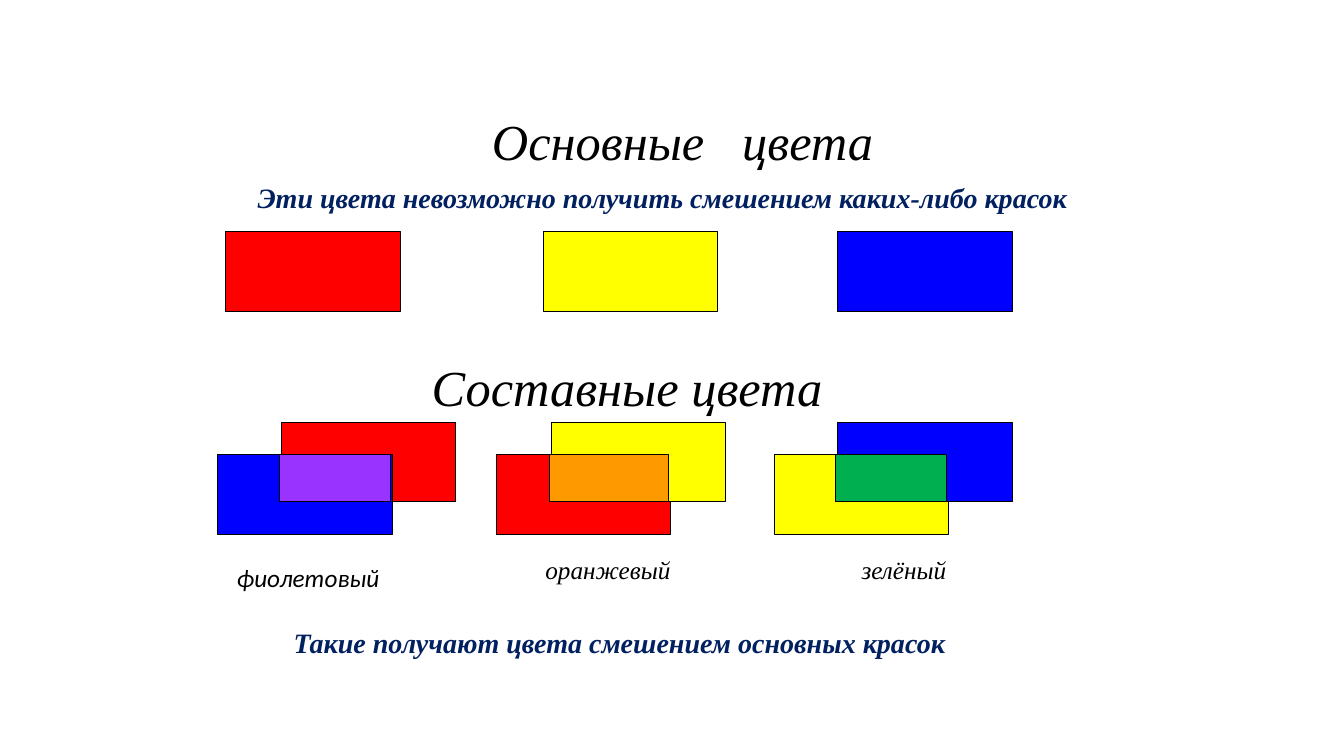
"""Build a slide on primary colours and the secondary colours mixed from them."""
from dataclasses import dataclass

from pptx import Presentation
from pptx.dml.color import RGBColor
from pptx.enum.shapes import MSO_SHAPE as Shape
from pptx.enum.text import MSO_ANCHOR as Anchor, PP_ALIGN as Align
from pptx.slide import Slide
from pptx.util import Emu, Pt

EMU_PER_PX = 9144


@dataclass(frozen=True)
class Theme:
    red: str = "FF0000"
    yellow: str = "FFFF00"
    blue: str = "0000FF"
    violet: str = "9933FF"
    orange: str = "FF9900"
    green: str = "00B050"
    ink: str = "000000"
    navy: str = "002060"
    serif: str = "Times New Roman"
    sans: str = "Calibri"
    title_size: int = 36
    note_size: int = 20
    label_size: int = 18
    outline: float = 0.75


THEME = Theme()
SWATCH_WIDTH, SWATCH_HEIGHT = 173, 79
PRIMARY_TOP, UPPER_TOP, LOWER_TOP = 230, 419, 451
OVERLAP_SHIFT = 2


@dataclass(frozen=True)
class Block:
    left: int
    top: int
    color: str
    width: int = SWATCH_WIDTH
    height: int = SWATCH_HEIGHT


@dataclass(frozen=True)
class Mixture:
    lower_left: int
    lower_color: str
    upper_left: int
    upper_color: str
    blend_color: str
    lower_in_front: bool = False


@dataclass(frozen=True)
class Caption:
    text: str
    left: int
    top: int
    width: int
    height: int
    size: int = THEME.label_size
    color: str = THEME.ink
    font: str = THEME.serif
    bold: bool = False
    wrap: bool = False
    word_gap: int = 0


PRIMARIES = [
    Block(224, PRIMARY_TOP, THEME.red),
    Block(539, PRIMARY_TOP, THEME.yellow),
    Block(831, PRIMARY_TOP, THEME.blue),
]
MIXTURES = [
    Mixture(216, THEME.blue, 279, THEME.red, THEME.violet, lower_in_front=True),
    Mixture(492, THEME.red, 547, THEME.yellow, THEME.orange),
    Mixture(768, THEME.yellow, 831, THEME.blue, THEME.green),
]
CAPTIONS = [
    Caption("Основные цвета", 374, 104, 606, 63, THEME.title_size, word_gap=18),
    Caption("Эти цвета невозможно получить смешением каких-либо красок",
            208, 174, 898, 44, THEME.note_size, THEME.navy, bold=True, wrap=True),
    Caption("Составные цвета", 303, 348, 638, 55, THEME.title_size),
    Caption("фиолетовый", 224, 553, 163, 39, font=THEME.sans),
    Caption("оранжевый", 531, 545, 144, 47),
    Caption("зелёный", 823, 545, 147, 39),
    Caption("Такие получают цвета смешением основных красок",
            201, 616, 827, 43, THEME.note_size, THEME.navy, bold=True, wrap=True),
]


def px(length: int) -> Emu:
    return Emu(length * EMU_PER_PX)


def draw_block(slide: Slide, block: Block) -> None:
    shape = slide.shapes.add_shape(
        Shape.RECTANGLE, px(block.left), px(block.top), px(block.width), px(block.height))
    shape.shadow.inherit = False
    shape.fill.solid()
    shape.fill.fore_color.rgb = RGBColor.from_string(block.color)
    shape.line.color.rgb = RGBColor.from_string(THEME.ink)
    shape.line.width = Pt(THEME.outline)


def draw_mixture(slide: Slide, mixture: Mixture) -> None:
    lower = Block(mixture.lower_left, LOWER_TOP, mixture.lower_color)
    upper = Block(mixture.upper_left, UPPER_TOP, mixture.upper_color)
    blend = Block(
        upper.left - OVERLAP_SHIFT, LOWER_TOP, mixture.blend_color,
        lower.left + lower.width - upper.left, upper.top + upper.height - LOWER_TOP)
    pair = (upper, lower) if mixture.lower_in_front else (lower, upper)
    for block in (*pair, blend):
        draw_block(slide, block)


def draw_caption(slide: Slide, caption: Caption) -> None:
    shape = slide.shapes.add_textbox(
        px(caption.left), px(caption.top), px(caption.width), px(caption.height))
    frame = shape.text_frame
    frame.word_wrap = caption.wrap
    frame.vertical_anchor = Anchor.TOP
    paragraph = frame.paragraphs[0]
    paragraph.alignment = Align.CENTER
    if caption.word_gap:
        first, second = caption.text.split(" ")
        paragraph.add_run().text = first
        space = paragraph.add_run()
        space.text = " "
        space.font._element.set("spc", str(caption.word_gap * 100))
        paragraph.add_run().text = second
    else:
        paragraph.add_run().text = caption.text
    font = paragraph.font
    font.name = caption.font
    font.size = Pt(caption.size)
    font.bold = caption.bold
    font.italic = True
    font.color.rgb = RGBColor.from_string(caption.color)


def main() -> None:
    presentation = Presentation()
    presentation.slide_width, presentation.slide_height = px(1333), px(750)
    slide = presentation.slides.add_slide(presentation.slide_layouts[6])
    for block in PRIMARIES:
        draw_block(slide, block)
    for mixture in MIXTURES:
        draw_mixture(slide, mixture)
    for caption in CAPTIONS:
        draw_caption(slide, caption)
    presentation.save("out.pptx")


if __name__ == "__main__":
    main()
